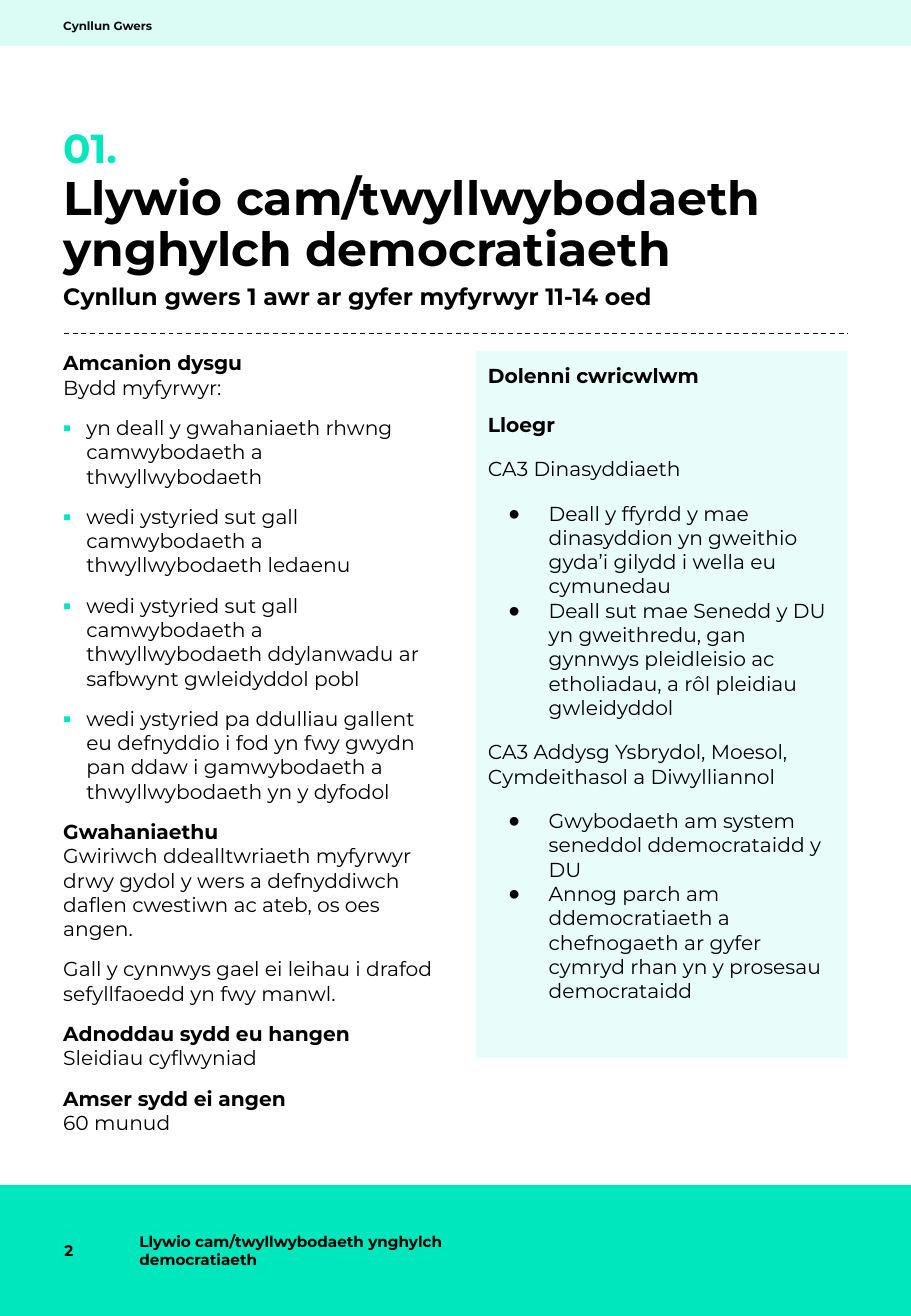
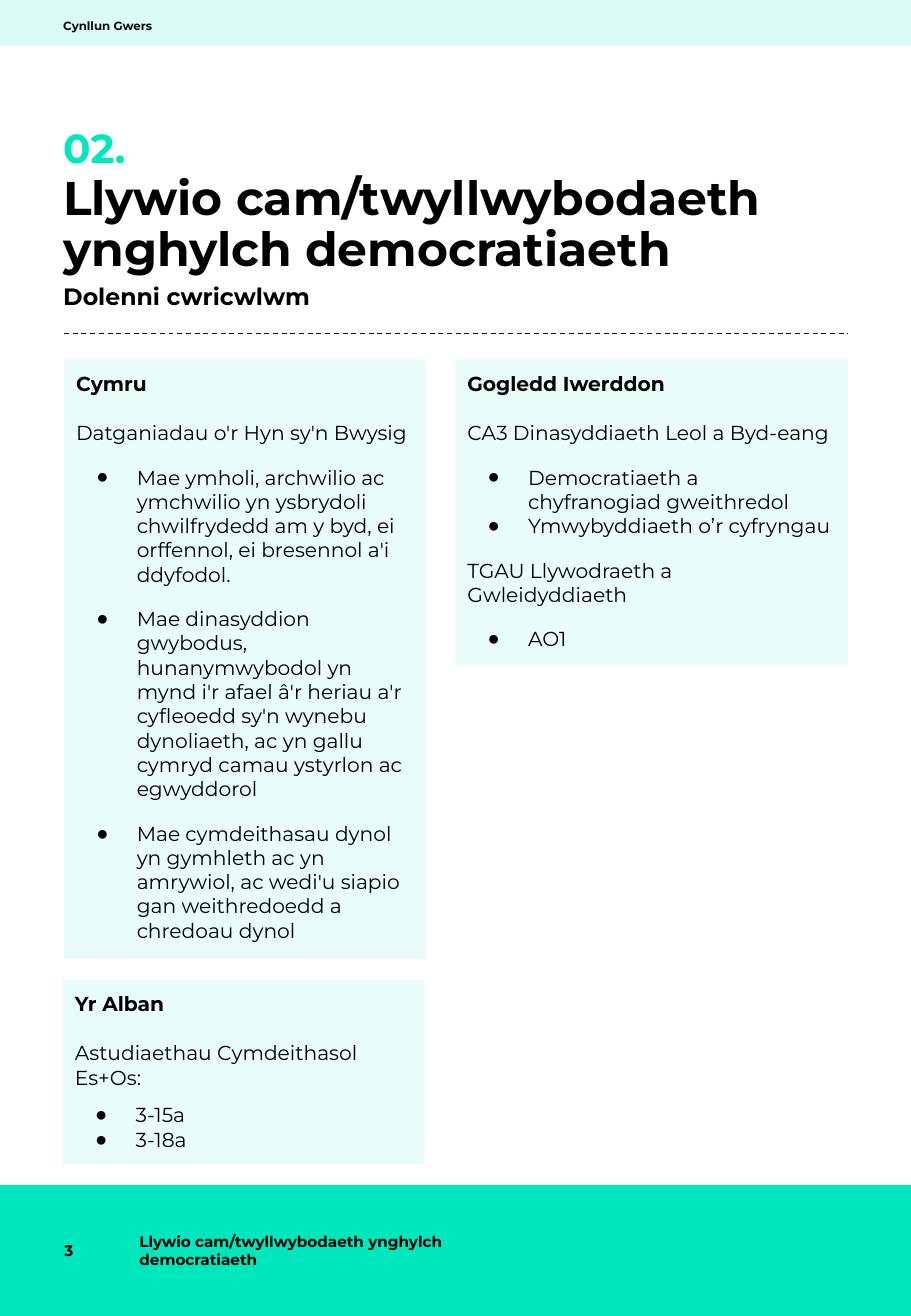
from dataclasses import dataclass

from lxml import etree
from pptx import Presentation
from pptx.dml.color import RGBColor
from pptx.enum.dml import MSO_LINE
from pptx.enum.shapes import MSO_CONNECTOR as CONN, MSO_SHAPE as SHAPE
from pptx.enum.text import MSO_ANCHOR as ANCHOR, MSO_AUTO_SIZE as FIT, PP_ALIGN as ALIGN
from pptx.oxml.ns import qn
from pptx.util import Pt

FONT = "Montserrat"
COLORS = {"accent": "00E7BD", "text": "000000", "soft": "0C0C0C"}
W, H = 540, 780.48
LEFT, CONTENT_W = 37.5, 465.1
FOOT_Y, FOOT_H = 702.7, 77.78
LINE = 14.6  # height of one 12 pt line
HEADER = "Cynllun Gwers"
TITLE = "Llywio cam/twyllwybodaeth ynghylch democratiaeth"


@dataclass(frozen=True)
class Box:
    x: float
    y: float
    w: float
    h: float


@dataclass(frozen=True)
class Bullet:
    char: str
    font: str
    color: str
    indent: float
    hang: float


@dataclass(frozen=True)
class Para:
    """A paragraph; lead is a bold line above the text."""
    text: str
    before: float = 0
    lead: str = ""
    bold: bool = False
    bullet: Bullet | None = None
    size: float = 12
    color: str = "text"
    spacing: float = 1.0


@dataclass(frozen=True)
class Card:
    box: Box
    paras: list[Para]


@dataclass(frozen=True)
class Page:
    number: int
    section: str
    subtitle: str
    cards: list[Card]
    body: list[Para]


SQUARE = Bullet("▪", FONT, "accent", 13.7, 13.7)
DOT = Bullet("●", "Arial", "text", 36, 24)


def head(text: str, before: float = 0) -> Para:
    return Para(text, before, bold=True)


def dot(text: str, before: float = 0) -> Para:
    return Para(text, before, bullet=DOT)


def goal(text: str) -> Para:
    return Para(text, 9.5, bullet=SQUARE)


PAGES = [
    Page(2, "01.", "Cynllun gwers 1 awr ar gyfer myfyrwyr 11-14 oed", [
        Card(Box(282.2, 208.1, 220.3, 419.5), [
            head("Dolenni cwricwlwm"),
            head("Lloegr", LINE),
            Para("CA3 Dinasyddiaeth", 12),
            dot("Deall y ffyrdd y mae dinasyddion yn gweithio gyda’i gilydd i wella eu "
                "cymunedau", 12),
            dot("Deall sut mae Senedd y DU yn gweithredu, gan gynnwys pleidleisio ac "
                "etholiadau, a rôl pleidiau gwleidyddol"),
            Para("CA3 Addysg Ysbrydol, Moesol, Cymdeithasol a Diwylliannol", 12),
            dot("Gwybodaeth am system seneddol ddemocrataidd y DU", 12),
            dot("Annog parch am ddemocratiaeth a chefnogaeth ar gyfer cymryd rhan yn y "
                "prosesau democrataidd"),
        ]),
    ], [
        Para("Bydd myfyrwyr:", lead="Amcanion dysgu"),
        goal("yn deall y gwahaniaeth rhwng camwybodaeth a thwyllwybodaeth"),
        goal("wedi ystyried sut gall camwybodaeth a thwyllwybodaeth ledaenu"),
        goal("wedi ystyried sut gall camwybodaeth a thwyllwybodaeth ddylanwadu ar "
             "safbwynt gwleidyddol pobl"),
        goal("wedi ystyried pa ddulliau gallent eu defnyddio i fod yn fwy gwydn pan "
             "ddaw i gamwybodaeth a thwyllwybodaeth yn y dyfodol"),
        Para("Gwiriwch ddealltwriaeth myfyrwyr drwy gydol y wers a defnyddiwch daflen "
             "cwestiwn ac ateb, os oes angen.", 9.5, "Gwahaniaethu"),
        Para("Gall y cynnwys gael ei leihau i drafod sefyllfaoedd yn fwy manwl.", 9.5),
        Para("Sleidiau cyflwyniad", 9.5, "Adnoddau sydd eu hangen"),
        Para("60 munud", 9.5, "Amser sydd ei angen"),
    ]),
    Page(3, "02.", "Dolenni cwricwlwm", [
        Card(Box(38, 213.1, 214.3, 355.7), [
            head("Cymru"),
            Para("Datganiadau o'r Hyn sy'n Bwysig", LINE),
            dot("Mae ymholi, archwilio ac ymchwilio yn ysbrydoli chwilfrydedd am y byd, "
                "ei orffennol, ei bresennol a'i ddyfodol.", 12),
            dot("Mae dinasyddion gwybodus, hunanymwybodol yn mynd i'r afael â'r heriau "
                "a'r cyfleoedd sy'n wynebu dynoliaeth, ac yn gallu cymryd camau "
                "ystyrlon ac egwyddorol", 12),
            dot("Mae cymdeithasau dynol yn gymhleth ac yn amrywiol, ac wedi'u siapio "
                "gan weithredoedd a chredoau dynol", 12),
        ]),
        Card(Box(270, 213.1, 232.6, 181.4), [
            head("Gogledd Iwerddon"),
            Para("CA3 Dinasyddiaeth Leol a Byd-eang", LINE),
            dot("Democratiaeth a chyfranogiad gweithredol", 12),
            dot("Ymwybyddiaeth o’r cyfryngau"),
            Para("TGAU Llywodraeth a Gwleidyddiaeth", 12),
            dot("AO1", 12),
        ]),
        Card(Box(37.4, 581, 214.3, 109.4), [
            head("Yr Alban"),
            Para("Astudiaethau Cymdeithasol Es+Os:", LINE),
            dot("3-15a", 8),
            dot("3-18a"),
        ]),
    ], []),
]


def rgb(name: str) -> RGBColor:
    return RGBColor.from_string(COLORS[name])


def place(box: Box) -> tuple[Pt, ...]:
    return tuple(Pt(v) for v in (box.x, box.y, box.w, box.h))


def add_bullet(p, bullet: Bullet) -> None:
    pPr = p._p.get_or_add_pPr()
    pPr.set("marL", str(Pt(bullet.indent)))
    pPr.set("indent", str(-Pt(bullet.hang)))
    clr = etree.SubElement(pPr, qn("a:buClr"))
    etree.SubElement(clr, qn("a:srgbClr"), val=COLORS[bullet.color])
    etree.SubElement(pPr, qn("a:buFont"), typeface=bullet.font)
    etree.SubElement(pPr, qn("a:buChar"), char=bullet.char)


def add_run(p, text: str, para: Para, bold: bool) -> None:
    r = p.add_run()
    r.text = text
    for name, value in {"name": FONT, "size": Pt(para.size), "bold": bold}.items():
        setattr(r.font, name, value)
    r.font.color.rgb = rgb(para.color)


def add_break(p, size: float) -> None:
    """Line break that keeps the text size, so the line is not made taller."""
    p.add_line_break()
    rPr = etree.SubElement(p._p[-1], qn("a:rPr"), sz=str(int(size * 100)))
    etree.SubElement(rPr, qn("a:latin"), typeface=FONT)


def write(tf, paras: list[Para], inset: tuple[float, float] = (0, 0),
          anchor: ANCHOR = ANCHOR.TOP) -> None:
    """Fill a text frame; inset is (horizontal, vertical)."""
    dx, dy = (Pt(v) for v in inset)
    frame = {"word_wrap": True, "auto_size": FIT.NONE, "vertical_anchor": anchor,
             "margin_left": dx, "margin_right": dx, "margin_top": dy, "margin_bottom": dy}
    for name, value in frame.items():
        setattr(tf, name, value)
    for i, para in enumerate(paras):
        p = tf.add_paragraph() if i else tf.paragraphs[0]
        if para.bullet:
            add_bullet(p, para.bullet)
        layout = {"alignment": ALIGN.LEFT, "line_spacing": para.spacing}
        if para.before:
            layout["space_before"] = Pt(para.before)
        for name, value in layout.items():
            setattr(p, name, value)
        if para.lead:
            add_run(p, para.lead, para, bold=True)
            add_break(p, para.size)
        add_run(p, para.text, para, para.bold)


def add_text(s, box: Box, paras: list[Para], **frame) -> None:
    write(s.shapes.add_textbox(*place(box)).text_frame, paras, **frame)


def add_panel(s, box: Box, opacity: int = 100):
    """Accent rectangle without outline; opacity in percent."""
    sp = s.shapes.add_shape(SHAPE.RECTANGLE, *place(box))
    sp.shadow.inherit = False
    sp.line.fill.background()
    sp.fill.solid()
    sp.fill.fore_color.rgb = rgb("accent")
    if opacity < 100:
        clr = sp._element.spPr.find(f"{qn('a:solidFill')}/{qn('a:srgbClr')}")
        etree.SubElement(clr, qn("a:alpha"), val=str(opacity * 1000))
    return sp


def add_divider(s, y: float) -> None:
    line = s.shapes.add_connector(CONN.STRAIGHT, Pt(38), Pt(y), Pt(LEFT + CONTENT_W), Pt(y))
    line.line.color.rgb = rgb("soft")
    line.line.width = Pt(0.75)
    line.line.dash_style = MSO_LINE.DASH
    etree.SubElement(line._element.spPr, qn("a:effectLst"))


def add_frame(s, page: Page) -> None:
    """Bands, header, headings and footer found on every page."""
    add_panel(s, Box(0, 0, W, 27.4), 14)
    add_panel(s, Box(0, FOOT_Y, W, FOOT_H))
    add_text(s, Box(LEFT, 5, 194.4, 20.2),
             [Para(HEADER, bold=True, size=7, color="soft")], anchor=ANCHOR.MIDDLE)
    headings = [
        (73.2, 26.6, Para(page.section, bold=True, size=24, color="accent")),
        (103.7, 63.4, Para(TITLE, bold=True, size=28, spacing=0.9)),
        (167, 30.2, Para(page.subtitle, bold=True, size=14)),
    ]
    for y, h, para in headings:
        add_text(s, Box(LEFT, y, CONTENT_W, h), [para])
    add_divider(s, 198)
    for x, w, text in ((31, 44.6, str(page.number)), (75.6, 199.4, TITLE)):
        add_text(s, Box(x, FOOT_Y, w, FOOT_H), [Para(text, bold=True, size=9)],
                 inset=(7.2, 3.6), anchor=ANCHOR.MIDDLE)


def main() -> None:
    prs = Presentation()
    prs.slide_width, prs.slide_height = Pt(W), Pt(H)
    for page in PAGES:
        s = prs.slides.add_slide(prs.slide_layouts[6])
        add_frame(s, page)
        if page.body:
            add_text(s, Box(LEFT, 208, 219, 442.8), page.body)
        for card in page.cards:
            write(add_panel(s, card.box, 9).text_frame, card.paras, inset=(7.2, 7.2))
    prs.save("out.pptx")


if __name__ == "__main__":
    main()
